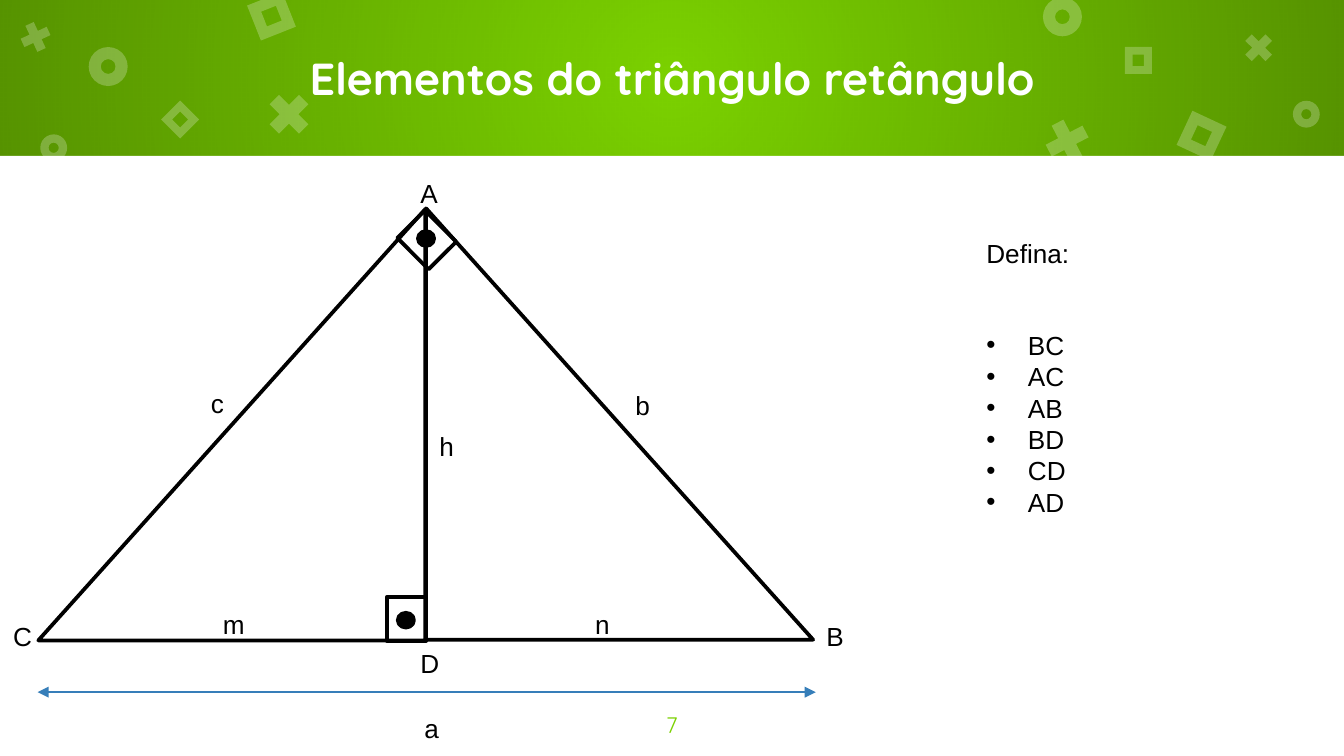
from dataclasses import dataclass
from typing import NamedTuple

from lxml.etree import SubElement
from pptx import Presentation
from pptx.dml.color import RGBColor
from pptx.enum.shapes import MSO_CONNECTOR, MSO_SHAPE
from pptx.enum.text import MSO_ANCHOR, MSO_AUTO_SIZE, PP_ALIGN
from pptx.oxml import parse_xml
from pptx.oxml.ns import nsdecls, qn
from pptx.util import Inches, Pt


@dataclass(frozen=True)
class Theme:
    green: RGBColor = RGBColor(0x7B, 0xD1, 0x00)
    white: RGBColor = RGBColor(0xFF, 0xFF, 0xFF)
    black: RGBColor = RGBColor(0x00, 0x00, 0x00)
    blue: RGBColor = RGBColor(0x36, 0x7E, 0xB9)
    heading_font: str = "Quicksand"
    body_font: str = "Arial"
    title_size: int = 24
    body_size: int = 14
    number_size: int = 12
    outline: float = 2
    arrow: float = 0.75
    ornament_alpha: int = 24
    band_edge_alpha: int = 30


THEME = Theme()
WIDTH = 10
HEIGHT = WIDTH * 9 / 16
BAND_HEIGHT = 1.16


class Ornament(NamedTuple):
    kind: MSO_SHAPE
    left: float
    top: float
    size: float
    rotation: float = 0


class Outline(NamedTuple):
    kind: MSO_SHAPE
    left: float
    top: float
    width: float
    height: float
    rotation: float = 0
    filled: bool = False


class Label(NamedTuple):
    text: str
    left: float
    top: float
    width: float
    height: float = 0.38


DONUT, CROSS, FRAME = MSO_SHAPE.DONUT, MSO_SHAPE.MATH_MULTIPLY, MSO_SHAPE.FRAME
ADJUSTMENTS = {DONUT: 0.31, CROSS: 0.235, FRAME: 0.289}
ORNAMENTS = (
    Ornament(DONUT, 0.66, 0.35, 0.29),
    Ornament(CROSS, 1.94, 0.64, 0.42),
    Ornament(FRAME, 1.88, -0.02, 0.28, 338.4),
    Ornament(DONUT, 7.76, -0.02, 0.29),
    Ornament(CROSS, 7.73, 0.84, 0.42, 17.5),
    Ornament(FRAME, 8.8, 0.87, 0.28, 25),
    Ornament(DONUT, 0.3, 1, 0.2),
    Ornament(CROSS, 0.12, 0.13, 0.29, 20.4),
    Ornament(FRAME, 1.24, 0.79, 0.2, 45),
    Ornament(DONUT, 9.62, 0.75, 0.2),
    Ornament(CROSS, 9.22, 0.21, 0.29),
    Ornament(FRAME, 8.37, 0.35, 0.2),
)
TRIANGLES = (
    Outline(MSO_SHAPE.RIGHT_TRIANGLE, 3.17, 1.55, 2.88, 3.21),
    Outline(MSO_SHAPE.RIGHT_TRIANGLE, 0.12, 1.72, 3.21, 2.88, 270),
)
RIGHT_ANGLE_MARKS = (
    Outline(MSO_SHAPE.RECTANGLE, 3.01, 1.64, 0.33, 0.29, 45),
    Outline(MSO_SHAPE.RECTANGLE, 2.86, 4.46, 0.33, 0.29, 90),
    Outline(MSO_SHAPE.OVAL, 3.11, 1.72, 0.12, 0.11, filled=True),
    Outline(MSO_SHAPE.OVAL, 2.96, 4.56, 0.12, 0.11, filled=True),
)
LABELS = (
    Label("A", 3.03, 1.27, 0.29),
    Label("B", 6.05, 4.57, 0.28),
    Label("C", 0, 4.57, 0.28),
    Label("D", 3.03, 4.77, 0.3),
    Label("c", 1.47, 2.83, 0.26),
    Label("b", 4.63, 2.85, 0.28),
    Label("n", 4.33, 4.48, 0.28),
    Label("m", 1.56, 4.48, 0.34),
    Label("h", 3.17, 3.15, 0.28),
    Label("a", 3.06, 5.25, 0.27),
)
SEGMENTS = ("BC", "AC", "AB", "BD", "CD", "AD")


def add_plain_shape(shapes, kind: MSO_SHAPE, left: float, top: float,
                    width: float, height: float, rotation: float = 0):
    """Add a shape without shadow or line."""
    shape = shapes.add_shape(kind, Inches(left), Inches(top), Inches(width), Inches(height))
    shape.rotation = rotation
    shape.shadow.inherit = False
    shape.line.fill.background()
    return shape


def fill_solid(shape, color: RGBColor) -> None:
    shape.fill.solid()
    shape.fill.fore_color.rgb = color


def add_alpha(color_element, percent: int) -> None:
    SubElement(color_element, qn("a:alpha"), val=str(percent * 1000))


def add_band(shapes) -> None:
    """Darken the green background towards the edges of the title band."""
    band = add_plain_shape(shapes, MSO_SHAPE.RECTANGLE, 0, 0, WIDTH, BAND_HEIGHT)
    band.fill.background()
    no_fill = band.element.spPr.find(qn("a:noFill"))
    gradient = parse_xml(
        f'<a:gradFill {nsdecls("a")} rotWithShape="1"><a:gsLst>'
        f'<a:gs pos="0"><a:srgbClr val="{THEME.black}"/></a:gs>'
        f'<a:gs pos="100000"><a:srgbClr val="{THEME.black}"/></a:gs></a:gsLst>'
        '<a:path path="circle"><a:fillToRect l="50000" t="50000" r="50000" b="50000"/>'
        '</a:path></a:gradFill>')
    for color, alpha in zip(gradient.iter(qn("a:srgbClr")), (0, THEME.band_edge_alpha)):
        add_alpha(color, alpha)
    band.element.spPr.replace(no_fill, gradient)


def add_ornament(shapes, ornament: Ornament) -> None:
    shape = add_plain_shape(shapes, ornament.kind, ornament.left, ornament.top,
                            ornament.size, ornament.size, ornament.rotation)
    shape.adjustments[0] = ADJUSTMENTS[ornament.kind]
    fill_solid(shape, THEME.white)
    add_alpha(shape.element.spPr.find(f'{qn("a:solidFill")}/{qn("a:srgbClr")}'),
              THEME.ornament_alpha)


def add_outline(shapes, outline: Outline) -> None:
    shape = add_plain_shape(shapes, outline.kind, outline.left, outline.top,
                            outline.width, outline.height, outline.rotation)
    if outline.filled:
        fill_solid(shape, THEME.black)
    else:
        shape.fill.background()
    shape.line.color.rgb = THEME.black
    shape.line.width = Pt(THEME.outline)


def style_paragraph(paragraph, font: str = THEME.body_font, size: int = THEME.body_size,
                    color: RGBColor = THEME.black, bold: bool = False) -> None:
    paragraph.font.name = font
    paragraph.font.size = Pt(size)
    paragraph.font.color.rgb = color
    paragraph.font.bold = bold


def add_label(shapes, label: Label):
    box = shapes.add_textbox(Inches(label.left), Inches(label.top),
                             Inches(label.width), Inches(label.height))
    box.text_frame.word_wrap = False
    box.text_frame.auto_size = MSO_AUTO_SIZE.SHAPE_TO_FIT_TEXT
    box.text_frame.text = label.text
    style_paragraph(box.text_frame.paragraphs[0])
    return box


def add_hypotenuse_arrow(shapes) -> None:
    arrow = shapes.add_connector(MSO_CONNECTOR.STRAIGHT, Inches(0.28), Inches(5.15),
                                 Inches(6.07), Inches(5.15))
    arrow.line.color.rgb = THEME.blue
    arrow.line.width = Pt(THEME.arrow)
    line = arrow.element.spPr.find(qn("a:ln"))
    for end in ("a:headEnd", "a:tailEnd"):
        SubElement(line, qn(end), type="triangle")
    SubElement(arrow.element.spPr, qn("a:effectLst"))


def add_segment_list(shapes) -> None:
    box = shapes.add_textbox(Inches(7.24), Inches(2.4), Inches(2.13), Inches(1.51))
    box.text_frame.word_wrap = True
    box.text_frame.text = "\n".join(SEGMENTS)
    for paragraph in box.text_frame.paragraphs:
        properties = paragraph._p.get_or_add_pPr()
        properties.set("marL", str(Inches(0.31)))
        properties.set("indent", str(-Inches(0.31)))
        bullet_color = SubElement(properties, qn("a:buClr"))
        SubElement(bullet_color, qn("a:srgbClr"), val=str(THEME.black))
        SubElement(properties, qn("a:buFont"), typeface=THEME.body_font)
        SubElement(properties, qn("a:buChar"), char="•")
        paragraph.line_spacing = Pt(16.8)
        style_paragraph(paragraph)


def place_title(slide) -> None:
    """Format the title and bring it in front of the band."""
    title = slide.shapes.title
    title.left, title.top = Inches(0.5), Inches(0)
    title.width, title.height = Inches(9), Inches(BAND_HEIGHT)
    title.text_frame.text = "Elementos do triângulo retângulo"
    title.text_frame.auto_size = MSO_AUTO_SIZE.NONE
    title.text_frame.vertical_anchor = MSO_ANCHOR.MIDDLE
    paragraph = title.text_frame.paragraphs[0]
    paragraph.alignment = PP_ALIGN.CENTER
    style_paragraph(paragraph, THEME.heading_font, THEME.title_size, THEME.white, True)
    title.element.getparent().append(title.element)


def add_page_number(shapes) -> None:
    box = add_label(shapes, Label("7", 4.7, 5.19, 0.6, 0.43))
    box.text_frame.auto_size = MSO_AUTO_SIZE.NONE
    box.text_frame.word_wrap = True
    box.text_frame.margin_top = box.text_frame.margin_bottom = Inches(0.1)
    paragraph = box.text_frame.paragraphs[0]
    paragraph.alignment = PP_ALIGN.CENTER
    style_paragraph(paragraph, THEME.heading_font, THEME.number_size, THEME.green)


def main() -> None:
    presentation = Presentation()
    presentation.slide_width, presentation.slide_height = Inches(WIDTH), Inches(HEIGHT)
    slide = presentation.slides.add_slide(presentation.slide_layouts[5])
    fill_solid(slide.background, THEME.green)
    add_band(slide.shapes)
    panel = add_plain_shape(slide.shapes, MSO_SHAPE.RECTANGLE, 0, BAND_HEIGHT,
                            WIDTH, HEIGHT - BAND_HEIGHT)
    fill_solid(panel, THEME.white)
    for ornament in ORNAMENTS:
        add_ornament(slide.shapes, ornament)
    place_title(slide)
    add_page_number(slide.shapes)

    diagram = slide.shapes.add_group_shape().shapes
    for triangle in TRIANGLES:
        add_outline(diagram, triangle)
    for label in LABELS:
        add_label(diagram, label)
    add_hypotenuse_arrow(diagram)
    for mark in RIGHT_ANGLE_MARKS:
        add_outline(diagram, mark)

    add_segment_list(slide.shapes)
    add_label(slide.shapes, Label("Defina:", 7.24, 1.72, 0.82, 0.34))
    presentation.save("out.pptx")


if __name__ == "__main__":
    main()
